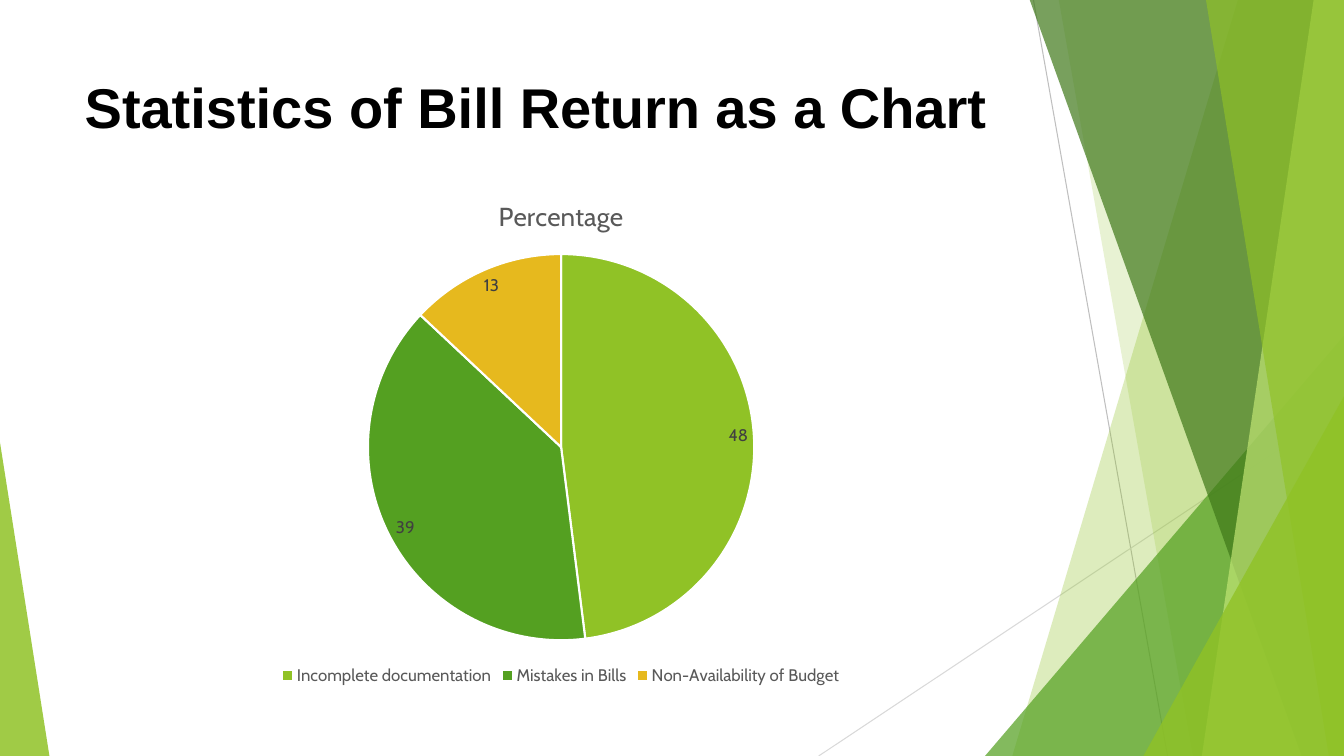
from dataclasses import dataclass

from lxml import etree
from pptx import Presentation
from pptx.chart.data import CategoryChartData
from pptx.dml.color import RGBColor
from pptx.enum.chart import XL_CHART_TYPE, XL_LABEL_POSITION, XL_LEGEND_POSITION
from pptx.enum.shapes import MSO_CONNECTOR, MSO_SHAPE
from pptx.enum.text import MSO_ANCHOR, MSO_AUTO_SIZE, PP_ALIGN
from pptx.oxml.ns import qn
from pptx.util import Inches, Pt

PIE = XL_CHART_TYPE.PIE
BEST_FIT = XL_LABEL_POSITION.BEST_FIT
LEGEND_BOTTOM = XL_LEGEND_POSITION.BOTTOM
STRAIGHT = MSO_CONNECTOR.STRAIGHT
TRIANGLE = MSO_SHAPE.ISOSCELES_TRIANGLE
TOP = MSO_ANCHOR.TOP
LEFT = PP_ALIGN.LEFT
NO_AUTOFIT = MSO_AUTO_SIZE.NONE
TITLE_ONLY = 5
WIDTH, HEIGHT = 13.33, 7.5


@dataclass(frozen=True)
class Theme:
    lime: str = "90C226"
    green: str = "54A021"
    forest: str = "3F7819"
    pale: str = "C0E474"
    gold: str = "E6B91E"
    white: str = "FFFFFF"
    black: str = "000000"
    label: str = "404040"
    muted: str = "595959"
    dark_line: str = "BFBFBF"
    light_line: str = "D9D9D9"
    title_font: str = "Arial"
    chart_font: str = "Cabin"
    title_size: float = 40
    chart_title_size: float = 18.6
    chart_size: float = 12


def format_font(font, name, size, color, bold=False):
    font.name = name
    font.size = Pt(size)
    font.bold = bold
    font.color.rgb = RGBColor.from_string(color)


def write_text(text_frame, text, **font_format):
    paragraph = text_frame.paragraphs[0]
    run = paragraph.add_run()
    run.text = text
    format_font(run.font, **font_format)
    return paragraph


class SlideBuilder:
    """Draws styled elements on one slide."""

    def __init__(self, slide, theme):
        self.slide = slide
        self.theme = theme

    def fill(self, shape, color, opacity):
        shape.shadow.inherit = False
        shape.line.fill.background()
        shape.fill.solid()
        shape.fill.fore_color.rgb = RGBColor.from_string(color)
        color_element = shape.fill._xPr.find(".//" + qn("a:srgbClr"))
        alpha = etree.SubElement(color_element, qn("a:alpha"))
        alpha.set("val", str(opacity * 1000))

    def line(self, start, end, color):
        connector = self.slide.shapes.add_connector(
            STRAIGHT, *(Inches(value) for value in (*start, *end)))
        connector.line.color.rgb = RGBColor.from_string(color)
        connector.line.width = Pt(0.75)
        etree.SubElement(connector._element.spPr, qn("a:effectLst"))

    def panel(self, top_left, bottom_left, color, opacity):
        corners = [(top_left, -0.01), (WIDTH, -0.01), (WIDTH, HEIGHT), (bottom_left, HEIGHT)]
        points = [(Inches(x), Inches(y)) for x, y in corners]
        builder = self.slide.shapes.build_freeform(*points[0], scale=1.0)
        builder.add_line_segments(points[1:], close=True)
        self.fill(builder.convert_to_shape(), color, opacity)

    def triangle(self, left, top, width, apex, color, opacity):
        shape = self.slide.shapes.add_shape(
            TRIANGLE, Inches(left), Inches(top), Inches(width), Inches(HEIGHT - top))
        shape.adjustments[0] = apex
        self.fill(shape, color, opacity)

    def title(self, text, left, top, width, height):
        title = self.slide.shapes.title
        title.left, title.top = Inches(left), Inches(top)
        title.width, title.height = Inches(width), Inches(height)
        text_frame = title.text_frame
        text_frame.word_wrap = True
        text_frame.auto_size = NO_AUTOFIT
        text_frame.vertical_anchor = TOP
        paragraph = write_text(text_frame, text, name=self.theme.title_font,
                               size=self.theme.title_size, color=self.theme.black, bold=True)
        paragraph.alignment = LEFT

    def pie(self, name, slices, left, top, width, height):
        theme = self.theme
        data = CategoryChartData()
        data.categories = [category for category, _, _ in slices]
        data.add_series(name, [value for _, value, _ in slices])
        chart = self.slide.shapes.add_chart(
            PIE, Inches(left), Inches(top), Inches(width), Inches(height), data).chart
        format_font(chart.font, theme.chart_font, theme.chart_size, theme.black)
        chart.has_title = True
        write_text(chart.chart_title.text_frame, name, name=theme.chart_font,
                   size=theme.chart_title_size, color=theme.muted)
        chart.chart_title.include_in_layout = False
        chart.has_legend = True
        chart.legend.position = LEGEND_BOTTOM
        chart.legend.include_in_layout = False
        format_font(chart.legend.font, theme.chart_font, theme.chart_size, theme.muted)
        plot = chart.plots[0]
        plot.vary_by_categories = True
        plot.has_data_labels = True
        labels = plot.data_labels
        labels.show_value = True
        labels.show_percentage = False
        labels.position = BEST_FIT
        format_font(labels.font, theme.chart_font, theme.chart_size, theme.label)
        for index, (_, _, color) in enumerate(slices):
            point_format = plot.series[0].points[index].format
            point_format.fill.solid()
            point_format.fill.fore_color.rgb = RGBColor.from_string(color)
            point_format.line.color.rgb = RGBColor.from_string(theme.white)
            point_format.line.width = Pt(1.5)


def main():
    theme = Theme()
    presentation = Presentation()
    presentation.slide_width = Inches(WIDTH)
    presentation.slide_height = Inches(HEIGHT)
    slide = presentation.slides.add_slide(presentation.slide_layouts[TITLE_ONLY])
    builder = SlideBuilder(slide, theme)

    builder.line((10.25, 0), (11.58, HEIGHT), theme.dark_line)
    builder.line((WIDTH, 4.03), (8.12, HEIGHT), theme.light_line)
    builder.panel(12.28, 10.04, theme.lime, 30)
    builder.panel(10.5, 11.83, theme.lime, 20)
    builder.triangle(9.77, 3.33, 3.56, 1, theme.green, 72)
    builder.panel(10.21, 12.91, theme.forest, 70)
    builder.panel(13.03, 11.92, theme.pale, 70)
    builder.panel(11.96, 13.18, theme.lime, 65)
    builder.triangle(11.34, 3.93, 1.99, 1, theme.lime, 80)
    builder.triangle(0, 4.39, 0.49, 0, theme.lime, 85)

    builder.title("Statistics of Bill Return as a Chart", 0.74, 0.67, 9.4, 1.44)
    slices = [
        ("Incomplete documentation", 48, theme.lime),
        ("Mistakes in Bills", 39, theme.green),
        ("Non-Availability of Budget", 13, theme.gold),
    ]
    builder.pie("Percentage", slices, 0.74, 1.76, 9.65, 5.08)
    presentation.save("out.pptx")


if __name__ == "__main__":
    main()
